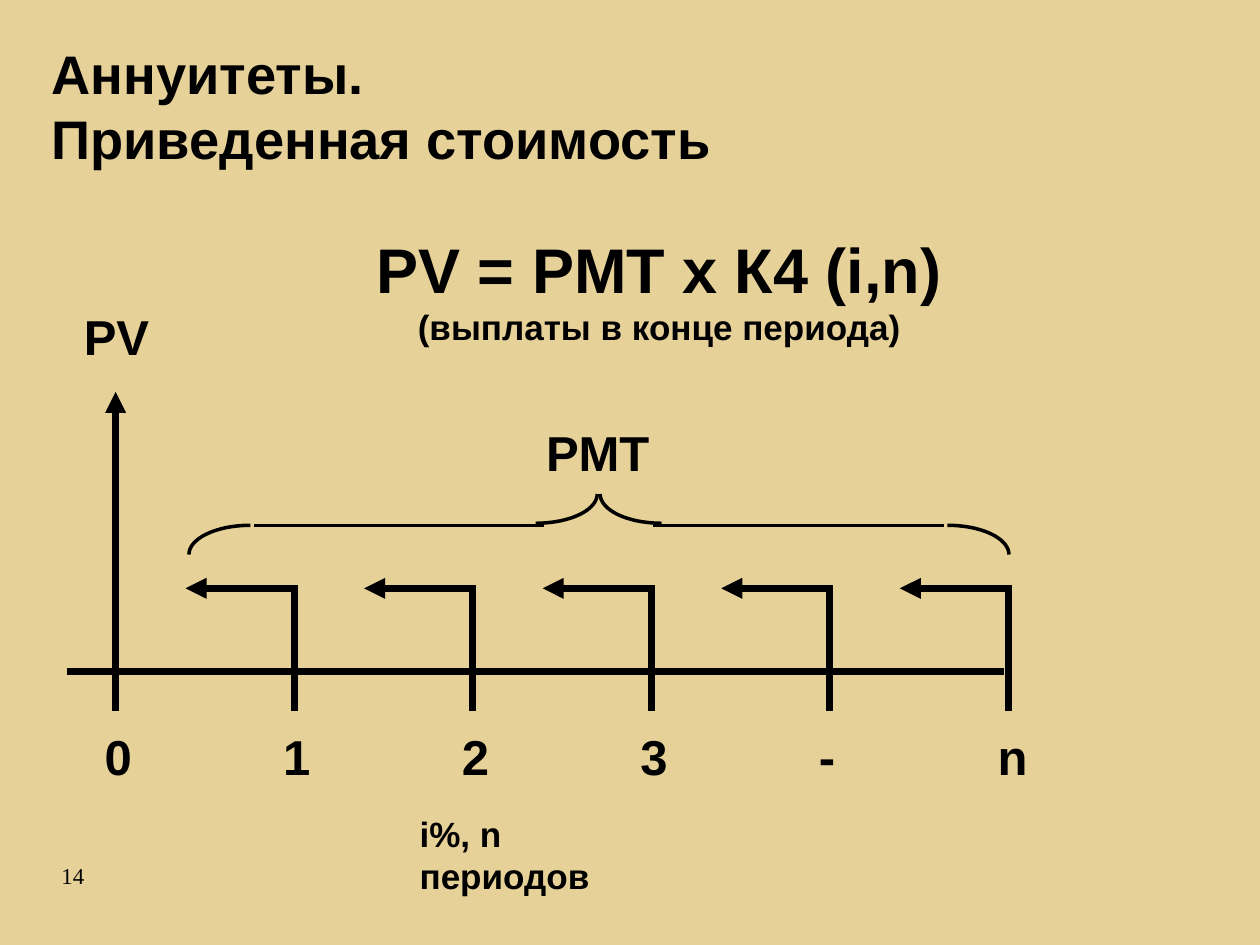
from math import cos, pi, sin

from lxml import etree
from pptx import Presentation
from pptx.dml.color import RGBColor
from pptx.enum.shapes import MSO_CONNECTOR
from pptx.enum.text import MSO_AUTO_SIZE, PP_ALIGN
from pptx.oxml.ns import qn
from pptx.util import Cm, Pt

STRAIGHT = MSO_CONNECTOR.STRAIGHT
LEFT, CENTER = PP_ALIGN.LEFT, PP_ALIGN.CENTER
GROW = MSO_AUTO_SIZE.SHAPE_TO_FIT_TEXT
COLORS = {"sand": "E6D199", "ink": "000000"}

START, STEP = 2.33, 3.6
LABELS = ["0", "1", "2", "3", "-", "n"]
FOOT = 14.33
ARROW_Y = 11.86
ARC_W, ARC_H = 1.24, 0.59
BAR_Y = 10.59
ARCS = [(5.05, 11.18, -1, -1), (19.1, 11.18, 1, -1),
        (10.8, 9.96, 1, 1), (13.34, 9.96, -1, 1)]
BARS = [(5.13, 10.97), (13.16, 19.02)]


def color(name):
    """Return the named colour."""
    return RGBColor.from_string(COLORS[name])


def add_text(slide, box, lines, align=LEFT, wrap=False, font="Arial", bold=True):
    """Add a text box with one paragraph per (text, size) pair."""
    frame = slide.shapes.add_textbox(*map(Cm, box)).text_frame
    frame.word_wrap = wrap
    frame.auto_size = GROW
    for i, (text, size) in enumerate(lines):
        para = frame.add_paragraph() if i else frame.paragraphs[0]
        para.text = text
        para.alignment = align
        para.font.name = font
        para.font.size = Pt(size)
        para.font.bold = bold
        para.font.color.rgb = color("ink")


def add_line(slide, x1, y1, x2, y2, width=4, arrow=False):
    """Draw a straight line, with an arrowhead at its end if asked."""
    line = slide.shapes.add_connector(STRAIGHT, *map(Cm, (x1, y1, x2, y2)))
    line.line.width = Pt(width)
    line.line.color.rgb = color("ink")
    if arrow:
        etree.SubElement(line.line._get_or_add_ln(), qn("a:tailEnd"), type="triangle")
    etree.SubElement(line._element.spPr, qn("a:effectLst"))


def add_arc(slide, x, y, right, down):
    """Draw a quarter ellipse around a centre, towards the given signs."""
    turns = [i * pi / 48 for i in range(25)]
    points = [(Cm(x + right * ARC_W * cos(t)), Cm(y + down * ARC_H * sin(t)))
              for t in turns]
    build = slide.shapes.build_freeform(*points[0])
    build.add_line_segments(points[1:], close=False)
    arc = build.convert_to_shape()
    arc.shadow.inherit = False
    arc.fill.background()
    arc.line.width = Pt(2)
    arc.line.color.rgb = color("ink")


def add_brace(slide):
    """Draw the brace over the payments."""
    for arc in ARCS:
        add_arc(slide, *arc)
    for left, right in BARS:
        add_line(slide, left, BAR_Y, right, BAR_Y, width=2)


def add_axis(slide):
    """Draw the time axis with its labels, ticks and payment arrows."""
    add_line(slide, 1.35, 13.54, 20.24, 13.54)
    add_line(slide, START, FOOT, START, 7.9, arrow=True)
    widths = {"-": 0.84, "n": 1.12}
    for i, label in enumerate(LABELS):
        x = START + i * STEP
        box = (x - 0.47, 14.53, widths.get(label, 1.04), 1.42)
        add_text(slide, box, [(label, 28)])
        if i:
            add_line(slide, x, ARROW_Y + 0.05, x, FOOT)
            add_line(slide, x + 0.07, ARROW_Y, x - 2.19, ARROW_Y, arrow=True)


def main():
    """Build and save the annuity slide."""
    deck = Presentation()
    deck.slide_width, deck.slide_height = Cm(25.4), Cm(19.05)
    slide = deck.slides.add_slide(deck.slide_layouts[6])
    slide.background.fill.solid()
    slide.background.fill.fore_color.rgb = color("sand")

    add_text(slide, (0.99, 17.25, 1.04, 0.81), [("14", 13)],
             font="Times New Roman", bold=False)
    add_text(slide, (0.79, 0.69, 22.99, 2.87),
             [("Аннуитеты.", 31), ("Приведенная стоимость", 31)], wrap=True)
    add_text(slide, (1.44, 6.05, 1.83, 1.42), [("PV", 28)])
    add_text(slide, (10.76, 8.4, 2.59, 1.42), [("PMT", 28)])
    add_text(slide, (8.21, 16.26, 5.6, 1.09), [("i%, n периодов", 20)], wrap=True)
    add_text(slide, (7.04, 4.52, 12.5, 4.14),
             [("PV = PMT x К4 (i,n)", 36), ("(выплаты в конце периода)", 20)],
             align=CENTER, wrap=True)
    add_brace(slide)
    add_axis(slide)
    deck.save("out.pptx")


if __name__ == "__main__":
    main()
